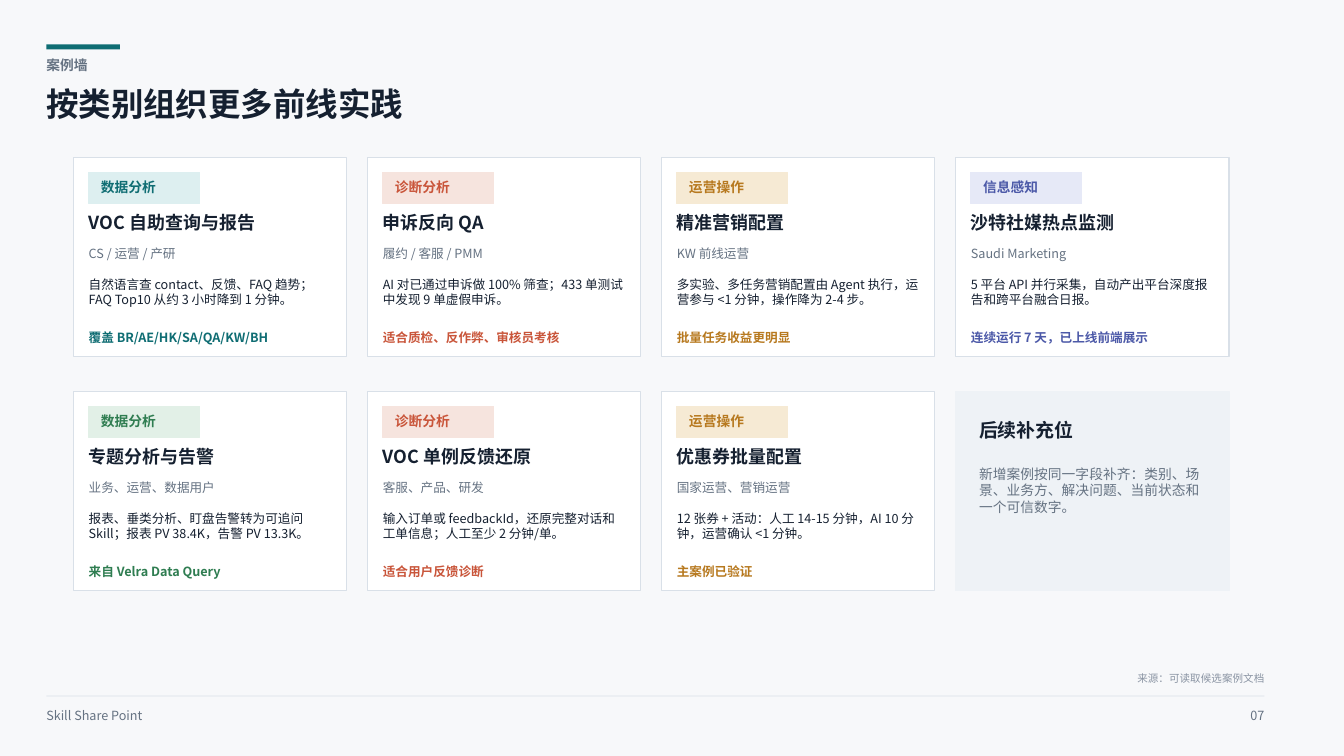
from dataclasses import dataclass

from lxml.etree import SubElement
from pptx import Presentation
from pptx.dml.color import RGBColor
from pptx.enum.shapes import MSO_SHAPE as Shape
from pptx.enum.text import MSO_ANCHOR as Anchor
from pptx.enum.text import MSO_AUTO_SIZE as AutoSize
from pptx.enum.text import PP_ALIGN as Align
from pptx.oxml.ns import qn
from pptx.slide import Slide
from pptx.text.text import TextFrame
from pptx.util import Inches, Pt

FONT = "Noto Sans CJK SC"
INK, MUTED, FAINT = "152030", "657282", "8A94A3"
PAPER, WHITE, RULE, SPARE = "F7F8FA", "FFFFFF", "D9E0E8", "EEF2F6"
TEAL = "0F6D73"

MARGIN = 0.46
CARD_LEFT, CARD_TOP = 0.73, 1.56
CARD_WIDTH, CARD_HEIGHT = 2.71, 1.98
COLUMN_PITCH, ROW_PITCH = 8.75 / 3, 2.32


@dataclass(frozen=True)
class Palette:
    text: str
    tint: str


@dataclass(frozen=True)
class Case:
    column: int
    row: int
    palette: Palette
    category: str
    title: str
    teams: str
    summary: str
    result: str


DATA = Palette(TEAL, "DDEFF0")
ALERT = Palette("2F7D51", "E2F0E7")
DIAGNOSIS = Palette("C9553A", "F6E4DE")
OPERATION = Palette("B7791F", "F6EAD4")
SENSING = Palette("4C59A8", "E6E9F7")

CASES = [
    Case(0, 0, DATA, "数据分析", "VOC 自助查询与报告", "CS / 运营 / 产研",
         "自然语言查 contact、反馈、FAQ 趋势；FAQ Top10 从约 3 小时降到 1 分钟。",
         "覆盖 BR/AE/HK/SA/QA/KW/BH"),
    Case(0, 1, ALERT, "数据分析", "专题分析与告警", "业务、运营、数据用户",
         "报表、垂类分析、盯盘告警转为可追问 Skill；报表 PV 38.4K，告警 PV 13.3K。",
         "来自 Velra Data Query"),
    Case(1, 0, DIAGNOSIS, "诊断分析", "申诉反向 QA", "履约 / 客服 / PMM",
         "AI 对已通过申诉做 100% 筛查；433 单测试中发现 9 单虚假申诉。",
         "适合质检、反作弊、审核员考核"),
    Case(1, 1, DIAGNOSIS, "诊断分析", "VOC 单例反馈还原", "客服、产品、研发",
         "输入订单或 feedbackId，还原完整对话和工单信息；人工至少 2 分钟/单。",
         "适合用户反馈诊断"),
    Case(2, 0, OPERATION, "运营操作", "精准营销配置", "KW 前线运营",
         "多实验、多任务营销配置由 Agent 执行，运营参与 <1 分钟，操作降为 2-4 步。",
         "批量任务收益更明显"),
    Case(2, 1, OPERATION, "运营操作", "优惠券批量配置", "国家运营、营销运营",
         "12 张券 + 活动：人工 14-15 分钟，AI 10 分钟，运营确认 <1 分钟。",
         "主案例已验证"),
    Case(3, 0, SENSING, "信息感知", "沙特社媒热点监测", "Saudi Marketing",
         "5 平台 API 并行采集，自动产出平台深度报告和跨平台融合日报。",
         "连续运行 7 天，已上线前端展示"),
]


def rgb(value: str) -> RGBColor:
    return RGBColor.from_string(value)


def write(tf: TextFrame, text: str, *, size: float, color: str = INK,
          bold: bool = False, align: Align = Align.LEFT) -> None:
    tf.word_wrap = True
    tf.auto_size = AutoSize.NONE
    tf.vertical_anchor = Anchor.TOP
    tf.margin_left = tf.margin_top = tf.margin_right = tf.margin_bottom = 0
    p = tf.paragraphs[0]
    p.alignment = align
    r = p.add_run()
    r.text = text
    r.font.size = Pt(size)
    r.font.bold = bold
    r.font.color.rgb = rgb(color)
    r.font.name = FONT
    SubElement(r._r.get_or_add_rPr(), qn("a:ea"), typeface=FONT)


def add_text(s: Slide, text: str, left: float, top: float, width: float,
             height: float, **style) -> None:
    sp = s.shapes.add_textbox(Inches(left), Inches(top), Inches(width), Inches(height))
    write(sp.text_frame, text, **style)


def add_rect(s: Slide, left: float, top: float, width: float, height: float,
             fill: str, line: str | None = None) -> None:
    sp = s.shapes.add_shape(Shape.RECTANGLE, Inches(left), Inches(top),
                            Inches(width), Inches(height))
    sp.shadow.inherit = False
    sp.fill.solid()
    sp.fill.fore_color.rgb = rgb(fill)
    if line:
        sp.line.color.rgb = rgb(line)
        sp.line.width = Pt(0.75)
    else:
        sp.line.fill.background()


def card_corner(column: int, row: int) -> tuple[float, float]:
    return CARD_LEFT + column * COLUMN_PITCH, CARD_TOP + row * ROW_PITCH


def add_case(s: Slide, case: Case) -> None:
    left, top = card_corner(case.column, case.row)
    inner, width = left + 0.15, 2.42
    accent = case.palette.text
    add_rect(s, left, top, CARD_WIDTH, CARD_HEIGHT, WHITE, RULE)
    add_rect(s, inner, top + 0.15, 1.1, 0.31, case.palette.tint, case.palette.tint)
    add_text(s, case.category, left + 0.27, top + 0.21, 0.85, 0.19,
             size=9.8, color=accent, bold=True)
    add_text(s, case.title, inner, top + 0.54, width, 0.25, size=12.8, bold=True)
    add_text(s, case.teams, inner, top + 0.88, width, 0.27, size=9, color=MUTED)
    add_text(s, case.summary, inner, top + 1.19, width, 0.44, size=9)
    add_text(s, case.result, inner, top + 1.71, width, 0.19,
             size=9, color=accent, bold=True)


def add_spare_card(s: Slide) -> None:
    left, top = card_corner(3, 1)
    add_rect(s, left, top, CARD_WIDTH, CARD_HEIGHT, SPARE, SPARE)
    add_text(s, "后续补充位", left + 0.23, top + 0.27, 2.25, 0.25, size=13.5, bold=True)
    add_text(s, "新增案例按同一字段补齐：类别、场景、业务方、解决问题、当前状态和一个可信数字。",
             left + 0.23, top + 0.74, 2.25, 0.69, size=9.8, color=MUTED)


def add_header(s: Slide) -> None:
    add_rect(s, MARGIN, 0.44, 0.73, 0.05, TEAL)
    add_text(s, "案例墙", MARGIN, 0.56, 3.75, 0.25, size=9.8, color=MUTED, bold=True)
    title = s.shapes.title
    title.left, title.top = Inches(MARGIN), Inches(0.83)
    title.width, title.height = Inches(10), Inches(0.5)
    write(title.text_frame, "按类别组织更多前线实践", size=23.2, bold=True)


def add_footer(s: Slide) -> None:
    add_text(s, "来源：可读取候选案例文档", 8.54, 6.67, 4, 0.17,
             size=7.5, color=FAINT, align=Align.RIGHT)
    add_rect(s, MARGIN, 6.9, 12.08, 0.01, RULE)
    add_text(s, "Skill Share Point", MARGIN, 7.02, 2.6, 0.19, size=9, color=MUTED)
    add_text(s, "07", 12.08, 7.02, 0.46, 0.19, size=9, color=MUTED, align=Align.RIGHT)


def main() -> None:
    prs = Presentation()
    prs.slide_width, prs.slide_height = Inches(13.33), Inches(7.5)
    s = prs.slides.add_slide(prs.slide_layouts.get_by_name("Title Only"))
    s.background.fill.solid()
    s.background.fill.fore_color.rgb = rgb(PAPER)
    add_header(s)
    for case in CASES:
        add_case(s, case)
    add_spare_card(s)
    add_footer(s)
    prs.save("out.pptx")


if __name__ == "__main__":
    main()
